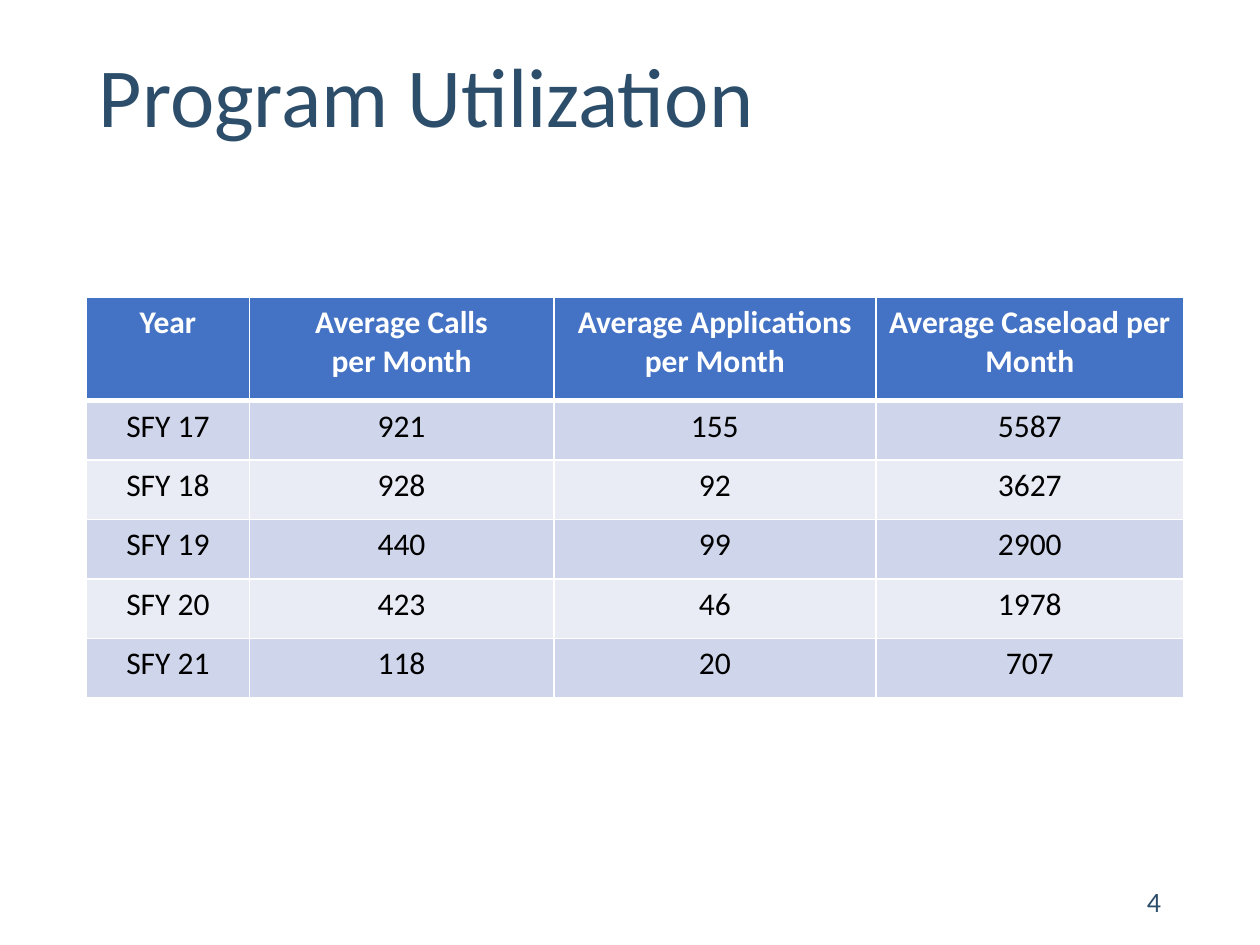
from lxml import etree
from pptx import Presentation
from pptx.dml.color import RGBColor
from pptx.enum import text as t
from pptx.oxml import ns
from pptx.util import Pt

FONT = "Calibri"
NAVY, BLUE, WHITE, BLACK = "2D4E6B", "4472C4", "FFFFFF", "000000"
BANDS = ["CFD5EA", "E9EBF5"]
WIDTHS = [93, 174, 184, 176]
HEAD, ROW = 59, 34
ROWS = [
    ["Year", "Average Calls\nper Month", "Average Applications per Month",
     "Average Caseload per Month"],
    ["SFY 17", "921", "155", "5587"],
    ["SFY 18", "928", "92", "3627"],
    ["SFY 19", "440", "99", "2900"],
    ["SFY 20", "423", "46", "1978"],
    ["SFY 21", "118", "20", "707"],
]


def paint(code):
    return RGBColor.from_string(code)


def style(frame, size, color, align, bold=False):
    for para in frame.paragraphs:
        para.alignment = align
        font = para.font
        font.name, font.size, font.bold = FONT, Pt(size), bold
        font.color.rgb = paint(color)


def label(slide, words, box, size, align):
    frame = slide.shapes.add_textbox(*map(Pt, box)).text_frame
    frame.word_wrap = True
    frame.vertical_anchor = t.MSO_ANCHOR.MIDDLE
    frame.text = words
    style(frame, size, NAVY, align)
    return frame


def edge(cell, side, width):
    props = cell._tc.get_or_add_tcPr()
    line = etree.SubElement(props, ns.qn(f"a:ln{side}"), w=str(Pt(width)))
    fill = etree.SubElement(line, ns.qn("a:solidFill"))
    etree.SubElement(fill, ns.qn("a:srgbClr"), val=WHITE)


def fill_cell(cell, words, row):
    head = row == 0
    cell.text = words
    style(cell.text_frame, 18, WHITE if head else BLACK, t.PP_ALIGN.CENTER, head)
    edges = {"L": 1, "R": 1, "T": 3 if row == 1 else 1, "B": 3 if head else 1}
    for side, width in edges.items():
        edge(cell, side, width)
    cell.fill.solid()
    cell.fill.fore_color.rgb = paint(BLUE if head else BANDS[(row - 1) % 2])


def grid(slide, left, top):
    high = HEAD + ROW * (len(ROWS) - 1)
    box = map(Pt, (left, top, sum(WIDTHS), high))
    table = slide.shapes.add_table(len(ROWS), len(WIDTHS), *box).table
    for col, width in zip(table.columns, WIDTHS):
        col.width = Pt(width)
    for row, items in enumerate(ROWS):
        table.rows[row].height = Pt(ROW if row else HEAD)
        for col, words in enumerate(items):
            fill_cell(table.cell(row, col), words, row)


def main():
    deck = Presentation()
    deck.slide_width, deck.slide_height = Pt(720), Pt(540)
    slide = deck.slides.add_slide(deck.slide_layouts[6])
    title = label(slide, "Program Utilization", (49.5, 5, 621, 104.5), 48,
                  t.PP_ALIGN.LEFT)
    title.paragraphs[0].line_spacing = 0.9
    grid(slide, 49.5, 170)
    label(slide, "4", (508.5, 500.5, 162, 28.75), 16, t.PP_ALIGN.RIGHT)
    deck.save("out.pptx")


if __name__ == "__main__":
    main()
